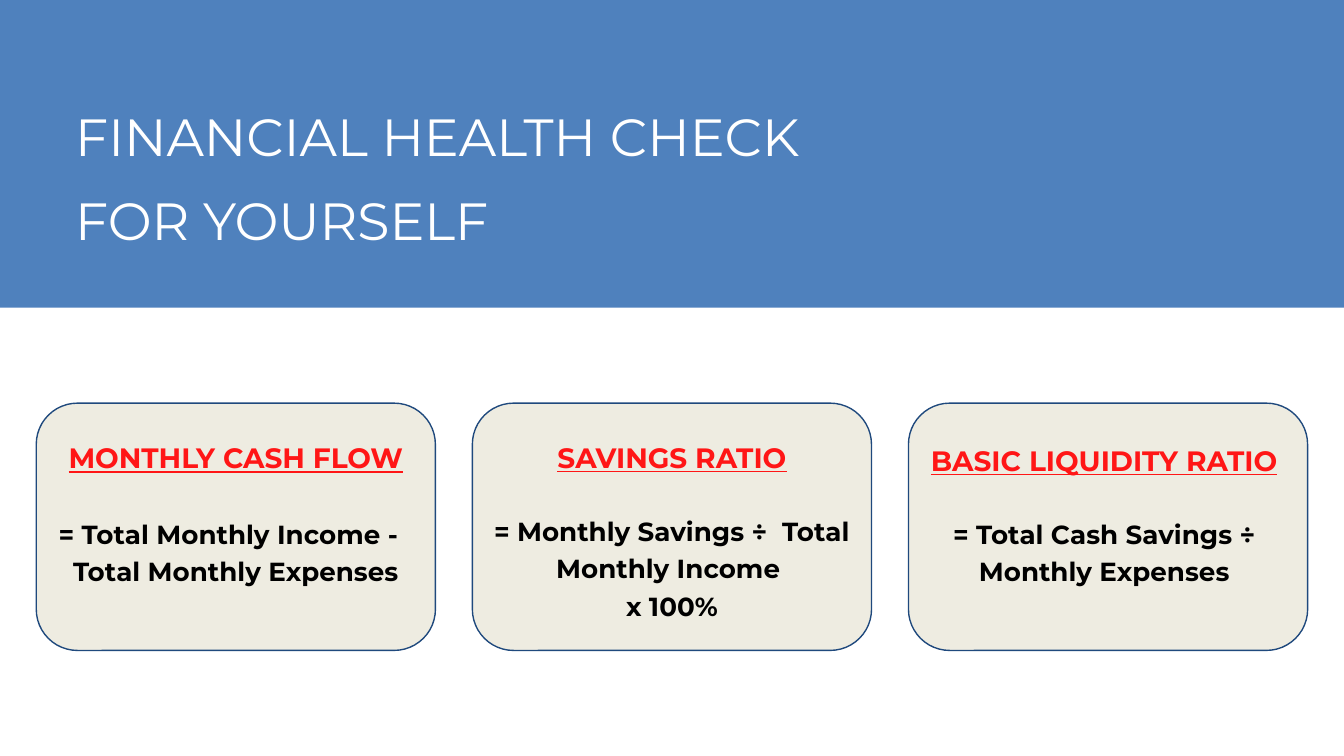
from pptx import Presentation
from pptx.dml.color import RGBColor
from pptx.enum.shapes import MSO_SHAPE
from pptx.enum.text import MSO_ANCHOR, PP_ALIGN
from pptx.util import Inches, Pt

RECTANGLE = MSO_SHAPE.RECTANGLE
ROUNDED = MSO_SHAPE.ROUNDED_RECTANGLE
TOP = MSO_ANCHOR.TOP
LEFT, CENTER = PP_ALIGN.LEFT, PP_ALIGN.CENTER

WHITE = RGBColor(0xFF, 0xFF, 0xFF)
BLACK = RGBColor(0x00, 0x00, 0x00)
BLUE = RGBColor(0x4F, 0x81, 0xBD)
NAVY = RGBColor(0x1F, 0x49, 0x7D)
CREAM = RGBColor(0xEE, 0xEC, 0xE1)
RED = RGBColor(0xFF, 0x16, 0x16)
FONT = "Montserrat"

TITLE = "FINANCIAL HEALTH CHECK FOR YOURSELF"
# heading, formula lines, text inset, text top, text height,
# points between heading and formula
CARDS = [
    ("MONTHLY CASH FLOW",
     ["= Total Monthly Income -  ", "Total Monthly Expenses"],
     0.08, 3.23, 1.39, 20),
    ("SAVINGS RATIO",
     ["= Monthly Savings ÷  Total Monthly Income ", "x 100%"],
     0, 3.23, 1.63, 18.5),
    ("BASIC LIQUIDITY RATIO ",
     ["= Total Cash Savings ÷ ", "Monthly Expenses "],
     0, 3.25, 1.35, 18.5),
]

PAGE_WIDTH = 10
PAGE_HEIGHT = PAGE_WIDTH * 9 / 16
BAND_TOP, BAND_HEIGHT = -0.14, 2.43
MARGIN = 0.27
CARD_TOP, CARD_WIDTH, CARD_HEIGHT = 3, 2.97, 1.84
GAP = (PAGE_WIDTH - 2 * MARGIN - len(CARDS) * CARD_WIDTH) / (len(CARDS) - 1)


def add_panel(page, kind, left, top, width, height, fill, line=None):
    panel = page.shapes.add_shape(
        kind, Inches(left), Inches(top), Inches(width), Inches(height))
    panel.shadow.inherit = False
    panel.fill.solid()
    panel.fill.fore_color.rgb = fill
    if line is None:
        panel.line.fill.background()
    else:
        panel.line.color.rgb = line
        panel.line.width = Pt(0.75)


def add_text_frame(page, left, top, width, height):
    box = page.shapes.add_textbox(
        Inches(left), Inches(top), Inches(width), Inches(height))
    frame = box.text_frame
    frame.word_wrap = True
    frame.vertical_anchor = TOP
    frame.margin_left = frame.margin_right = 0
    frame.margin_top = frame.margin_bottom = 0
    return frame


def add_span(para, text, size, color, bold=False, underline=False):
    span = para.add_run()
    span.text = text
    span.font.name = FONT
    span.font.size = Pt(size)
    span.font.color.rgb = color
    span.font.bold = bold
    span.font.underline = underline


def add_title(page):
    frame = add_text_frame(page, 0.56, 0.62, 5.58, 1.67)
    para = frame.paragraphs[0]
    para.alignment = LEFT
    para.line_spacing = 1.34
    add_span(para, TITLE, 28, WHITE)


def add_card_text(page, left, heading, formula, inset, top, height, space):
    frame = add_text_frame(page, left + inset, top,
                           CARD_WIDTH - 2 * inset, height)
    para = frame.paragraphs[0]
    para.alignment = CENTER
    para.line_spacing = 1.2
    para.space_after = Pt(space)
    name = heading.rstrip()
    add_span(para, name, 15, RED, bold=True, underline=True)
    if name != heading:
        add_span(para, " ", 15, RED, bold=True)
    for line in formula:
        para = frame.add_paragraph()
        para.alignment = CENTER
        para.line_spacing = 1.2
        add_span(para, line, 14, BLACK, bold=True)


def main():
    deck = Presentation()
    deck.slide_width = Inches(PAGE_WIDTH)
    deck.slide_height = Inches(PAGE_HEIGHT)
    page = deck.slides.add_slide(deck.slide_layouts[6])
    add_panel(page, RECTANGLE, 0, BAND_TOP, PAGE_WIDTH, BAND_HEIGHT, BLUE)
    add_title(page)
    for index, card in enumerate(CARDS):
        left = MARGIN + index * (CARD_WIDTH + GAP)
        add_panel(page, ROUNDED, left, CARD_TOP, CARD_WIDTH, CARD_HEIGHT,
                  CREAM, NAVY)
        add_card_text(page, left, *card)
    deck.save("out.pptx")


if __name__ == "__main__":
    main()
